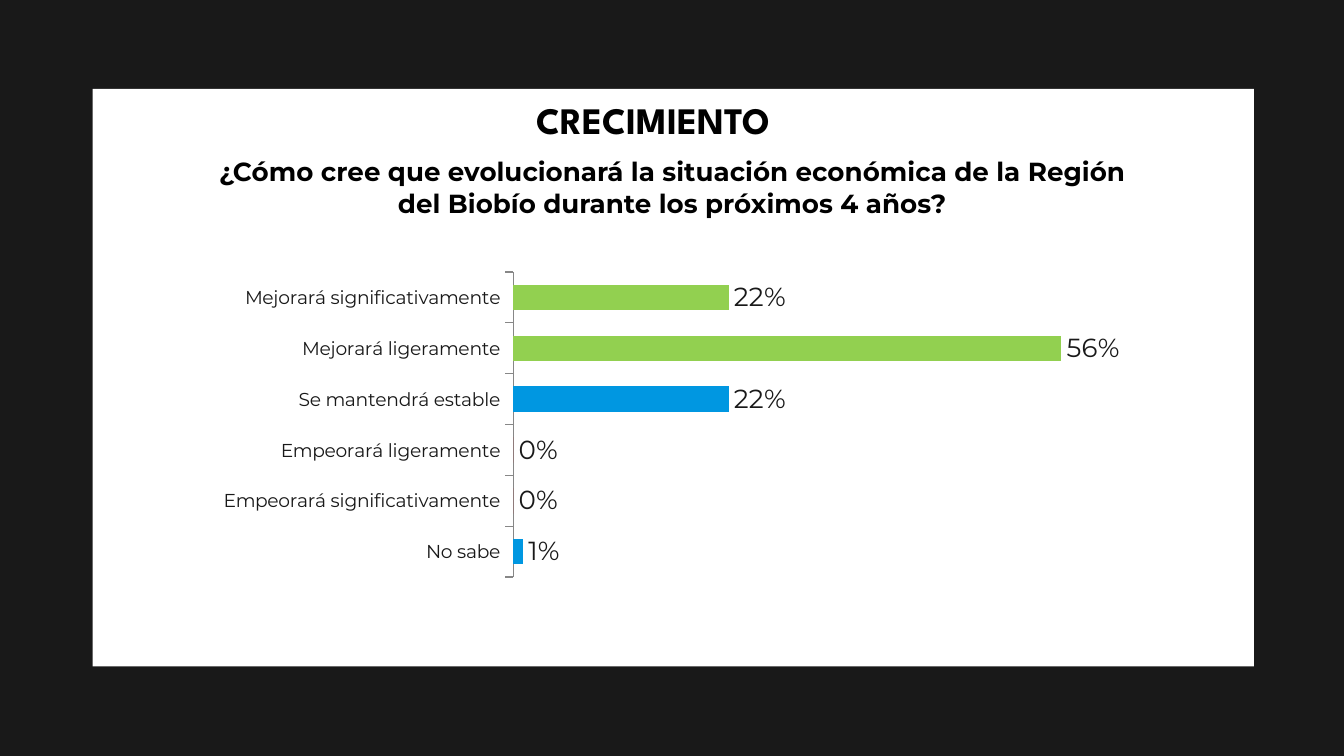
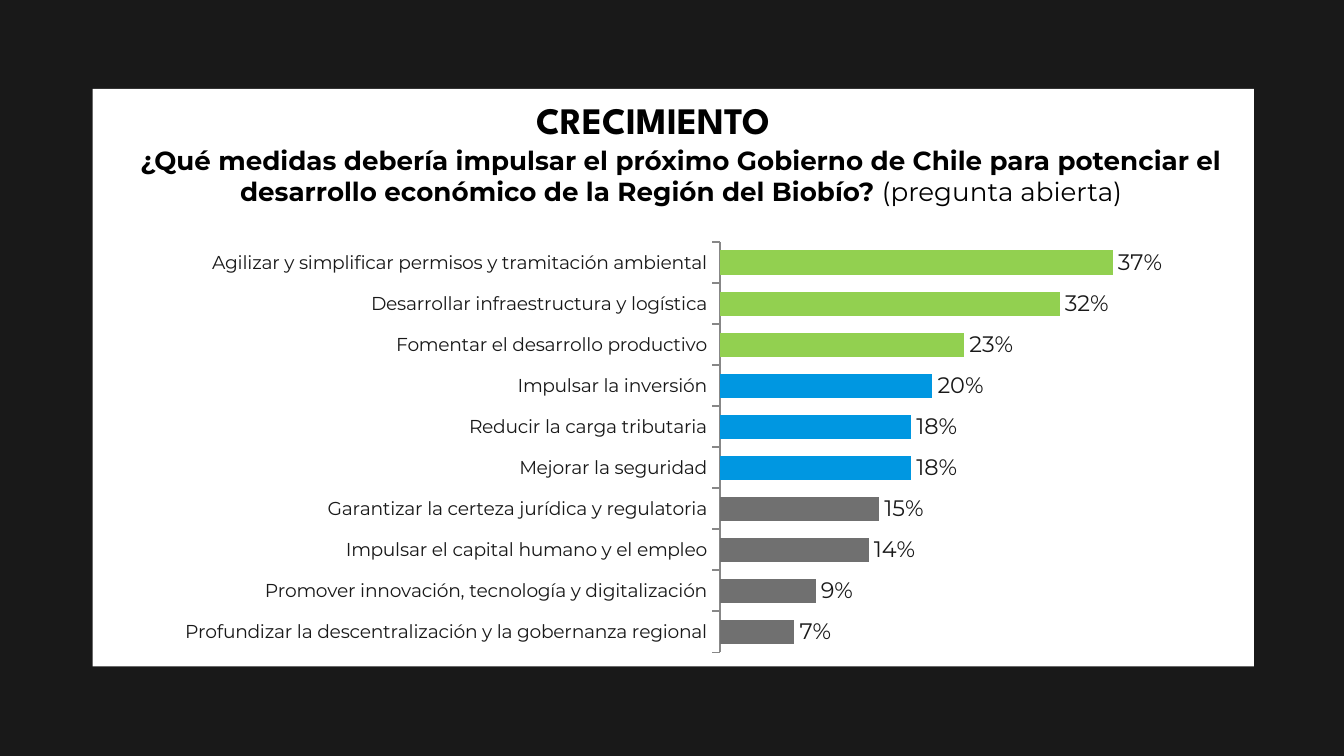
import pptx
import pptx.chart.data
import pptx.dml.color
import pptx.enum.chart
import pptx.enum.shapes
import pptx.enum.text
import pptx.oxml
import pptx.util
from pptx.util import Cm

DARK, WHITE, BLACK = "191919", "FFFFFF", "000000"
GREEN, BLUE, RED, GREY = "92D050", "0097E1", "CB2929", "707070"
AXIS_GREY = "878787"
TITLE_FONT, BODY_FONT = "League Spartan", "Montserrat"

OUTLOOK = [
    ("Mejorará significativamente", 0.22, GREEN),
    ("Mejorará ligeramente", 0.56, GREEN),
    ("Se mantendrá estable", 0.22, BLUE),
    ("Empeorará ligeramente", 0, RED),
    ("Empeorará significativamente", 0, RED),
    ("No sabe", 0.01, BLUE),
]
MEASURES = [
    ("Agilizar y simplificar permisos y tramitación ambiental", 0.37, GREEN),
    ("Desarrollar infraestructura y logística", 0.32, GREEN),
    ("Fomentar el desarrollo productivo", 0.23, GREEN),
    ("Impulsar la inversión", 0.20, BLUE),
    ("Reducir la carga tributaria", 0.18, BLUE),
    ("Mejorar la seguridad", 0.18, BLUE),
    ("Garantizar la certeza jurídica y regulatoria", 0.15, GREY),
    ("Impulsar el capital humano y el empleo", 0.14, GREY),
    ("Promover innovación, tecnología y digitalización", 0.09, GREY),
    ("Profundizar la descentralización y la gobernanza regional", 0.07, GREY),
]


def colour(value):
    """Turn a hex string into a colour."""
    return pptx.dml.color.RGBColor.from_string(value)


def paint(fill, value):
    """Give a fill one solid colour."""
    fill.solid()
    fill.fore_color.rgb = colour(value)


def style_font(font, size, name=BODY_FONT, shade=DARK, bold=False):
    """Set the face, size, colour and weight of a font."""
    font.name = name
    font.size = pptx.util.Pt(size)
    font.color.rgb = colour(shade)
    font.bold = bold


def write_text(box, text, align="LEFT", light="", **font_format):
    """Write one formatted paragraph, with an optional regular-weight ending."""
    frame = box.text_frame
    frame.word_wrap = True
    frame.auto_size = pptx.enum.text.MSO_AUTO_SIZE.SHAPE_TO_FIT_TEXT
    frame.vertical_anchor = pptx.enum.text.MSO_ANCHOR.TOP
    para = frame.paragraphs[0]
    para.alignment = pptx.enum.text.PP_ALIGN[align]
    span = para.add_run()
    span.text = text
    style_font(span.font, **font_format)
    if light:
        span = para.add_run()
        span.text = light
        style_font(span.font, **{**font_format, "bold": False})


def add_panel(page):
    """Lay the white panel behind everything else on the slide."""
    panel = page.shapes.add_shape(pptx.enum.shapes.MSO_SHAPE.RECTANGLE,
                                  Cm(1.75), Cm(1.68), Cm(21.95), Cm(10.92))
    panel.shadow.inherit = False
    paint(panel.fill, WHITE)
    panel.line.fill.background()
    page.shapes.title.element.addprevious(panel.element)


def add_page(deck):
    """Add a slide with the white panel and the section title."""
    page = deck.slides.add_slide(deck.slide_layouts[5])
    title = page.shapes.title
    title.left, title.top, title.width, title.height = Cm(9.88), Cm(1.7), Cm(6.45), Cm(1.12)
    write_text(title, "CRECIMIENTO", size=20, name=TITLE_FONT, shade=BLACK, bold=True)
    add_panel(page)
    return page


def add_question(page, text, left, top, width, light=""):
    """Add the centred survey question."""
    box = page.shapes.add_textbox(Cm(left), Cm(top), Cm(width), Cm(1.45))
    write_text(box, text, align="CENTER", light=light, size=14, shade=BLACK, bold=True)


def place_plot(chart, left, top, width, height):
    """Fix the inner plot area as fractions of the chart."""
    area = chart.element.xpath("c:chart/c:plotArea")[0]
    for old in area.xpath("c:layout"):
        area.remove(old)
    sides = "".join(f'<c:{tag} val="{value}"/>' for tag, value in (
        ("xMode", "edge"), ("yMode", "edge"),
        ("x", left), ("y", top), ("w", width), ("h", height)))
    area.insert(0, pptx.oxml.parse_xml(
        '<c:layout xmlns:c="http://schemas.openxmlformats.org/drawingml/2006/chart">'
        f'<c:manualLayout><c:layoutTarget val="inner"/>{sides}</c:manualLayout></c:layout>'))


def add_bars(page, answers, frame, plot_area, maximum, gap, overlap, label_size):
    """Add a bar chart of answers, each with its own colour."""
    names, values, shades = zip(*answers)
    data = pptx.chart.data.CategoryChartData(number_format="0%")
    data.categories = names
    data.add_series("Series 1", values)
    chart = page.shapes.add_chart(pptx.enum.chart.XL_CHART_TYPE.BAR_CLUSTERED,
                                  *map(Cm, frame), data).chart
    chart.has_legend = chart.has_title = False
    style_font(chart.font, 10)
    place_plot(chart, *plot_area)

    categories = chart.category_axis
    categories.reverse_order = True
    categories.has_major_gridlines = False
    categories.major_tick_mark = pptx.enum.chart.XL_TICK_MARK.OUTSIDE
    categories.format.line.color.rgb = colour(AXIS_GREY)
    categories.format.line.width = pptx.util.Pt(0.75)
    style_font(categories.tick_labels.font, 10)
    scale = chart.value_axis
    scale.visible = scale.has_major_gridlines = False
    scale.minimum_scale, scale.maximum_scale = 0, maximum

    plot = chart.plots[0]
    plot.gap_width, plot.overlap = gap, overlap
    plot.vary_by_categories = False
    series = plot.series[0]
    series.invert_if_negative = False
    paint(series.format.fill, BLUE)
    for index, shade in enumerate(shades):
        paint(series.points[index].format.fill, shade)
    labels = series.data_labels
    labels.show_value = True
    labels.number_format, labels.number_format_is_linked = "0%", False
    labels.position = pptx.enum.chart.XL_LABEL_POSITION.OUTSIDE_END
    style_font(labels.font, label_size)


def main():
    """Build the two survey slides and save the deck."""
    deck = pptx.Presentation()
    deck.slide_width, deck.slide_height = Cm(25.4), Cm(14.29)
    paint(deck.slide_master.background.fill, DARK)

    page = add_page(deck)
    add_bars(page, OUTLOOK, (3.76, 4.72, 17.9, 6.5), (0.332, 0.065, 0.62, 0.888),
             maximum=0.6, gap=100, overlap=30, label_size=14)
    add_question(page, "¿Cómo cree que evolucionará la situación económica de la Región "
                 "del Biobío durante los próximos 4 años?", 3.76, 2.82, 17.9)

    page = add_page(deck)
    add_bars(page, MEASURES, (2.69, 4.29, 20, 8.18), (0.546, 0.035, 0.401, 0.948),
             maximum=0.4, gap=70, overlap=-8, label_size=12)
    add_question(page, "¿Qué medidas debería impulsar el próximo Gobierno de Chile para "
                 "potenciar el desarrollo económico de la Región del Biobío?",
                 1.9, 2.6, 21.95, light=" (pregunta abierta)")

    deck.save("out.pptx")


if __name__ == "__main__":
    main()
